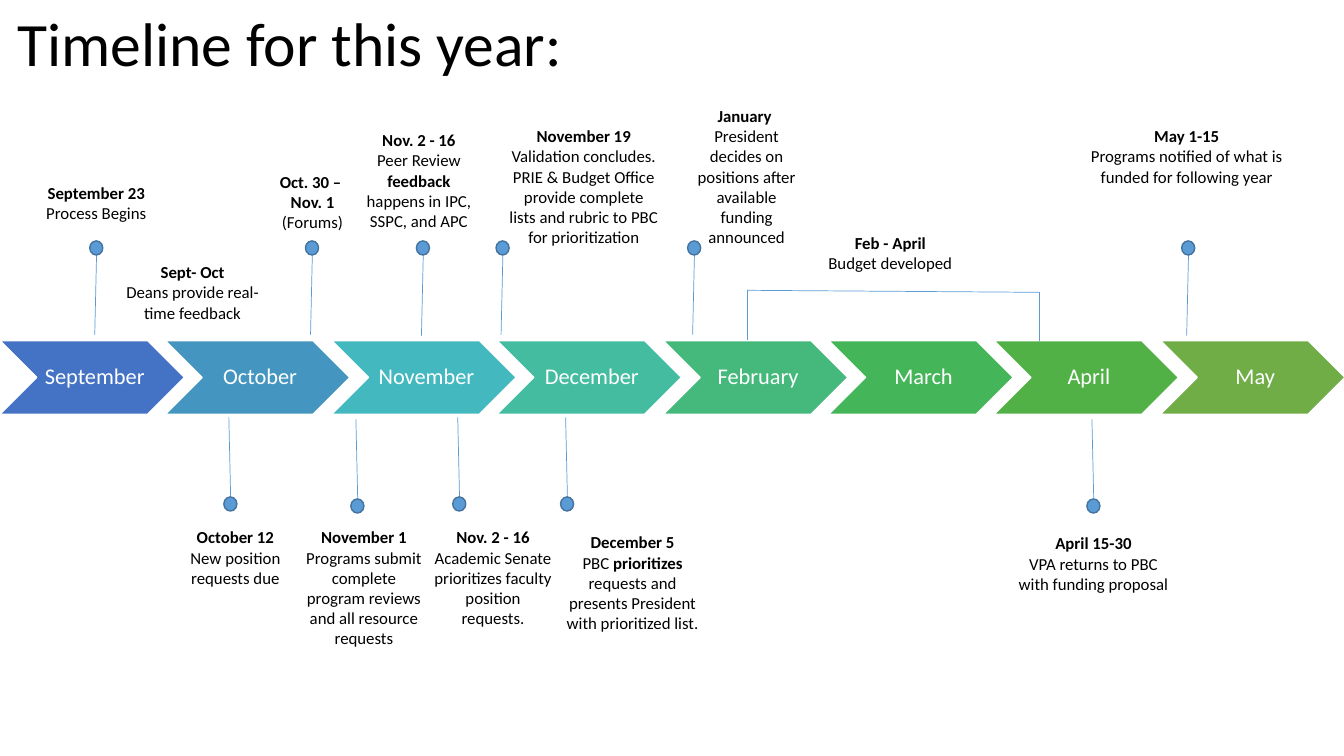
from dataclasses import dataclass

from lxml import etree
from pptx import Presentation, util as u
from pptx.dml.color import RGBColor
from pptx.enum import shapes, text
from pptx.oxml.ns import qn

PX = 9144  # EMU per px: 100 px to the inch


@dataclass(frozen=True)
class Theme:
    font: str = "Calibri"
    ink: str = "000000"
    white: str = "FFFFFF"
    stem: str = "5B9BD5"
    dot_edge: str = "43739E"
    title_size: int = 44
    month_size: int = 16
    note_size: int = 12


@dataclass(frozen=True)
class Month:
    name: str
    color: str


@dataclass(frozen=True)
class Pin:
    x: int
    above: bool
    shift: int = 0


@dataclass(frozen=True)
class Note:
    """Event text; words between asterisks are bold."""
    x: int
    y: int
    w: int
    h: int
    words: str


THEME = Theme()
MONTH_W, MONTH_H, MONTH_TOP, MONTH_STEP = 183, 73, 338, 164.4
DOT_W, DOT_H = 13, 14

MONTHS = [
    Month("September", "4472C4"), Month("October", "4496C1"),
    Month("November", "43B8BF"), Month("December", "43BCA0"),
    Month("February", "44B97B"), Month("March", "45B559"),
    Month("April", "52B146"), Month("May", "70AD47"),
]
PINS = [
    Pin(94, True), Pin(308, True), Pin(418, True, 1), Pin(497, True),
    Pin(687, True), Pin(1177, True, 1),
    Pin(227, False), Pin(353, False, 2), Pin(454, False), Pin(561, False),
    Pin(1083, False, 2),
]
NOTES = [
    Note(26, 176, 139, 50, "*September 23*\nProcess Begins"),
    Note(115, 255, 152, 71, "*Sept- Oct*\nDeans provide real-time feedback"),
    Note(262, 165, 96, 71, "*Oct. 30 – *\n*Nov. 1*\n(Forums)"),
    Note(346, 124, 139, 111, "*Nov. 2 - 16*\nPeer Review *feedback* happens in IPC, SSPC, and APC"),
    Note(495, 120, 168, 131, "*November 19*\nValidation concludes. PRIE & Budget Office provide "
         "complete lists and rubric to PBC for prioritization"),
    Note(675, 100, 131, 151, "*January *\nPresident decides on positions after available "
         "funding announced"),
    Note(774, 226, 218, 50, "*Feb - April*\nBudget developed"),
    Note(1068, 120, 218, 71, "*May 1-15*\nPrograms notified of what is funded for following year"),
    Note(176, 518, 115, 71, "*October 12*\nNew position requests due"),
    Note(291, 518, 140, 131, "*November 1*\nPrograms submit complete program reviews and all "
         "resource requests"),
    Note(420, 518, 138, 111, "*Nov. 2 - 16*\nAcademic Senate prioritizes faculty position requests."),
    Note(546, 523, 163, 111, "*December 5*\nPBC *prioritizes* requests and presents President "
         "with prioritized list."),
    Note(1000, 524, 169, 71, "*April 15-30*\nVPA returns to PBC with funding proposal"),
]
BUDGET_BRACKET = [(741, 337), (741, 288), (1031, 290), (1031, 338)]


def px(*lengths: float) -> list[u.Emu]:
    return [u.Emu(round(n) * PX) for n in lengths]


def rgb(color: str) -> RGBColor:
    return RGBColor.from_string(color)


def write(tf, words: str, *, size: int, color: str = THEME.ink,
          align=text.PP_ALIGN.CENTER, anchor=text.MSO_ANCHOR.TOP,
          spacing: float = 1.0) -> None:
    """Fill a text frame, one paragraph a line, with *bold* parts."""
    tf.word_wrap = True
    tf.vertical_anchor = anchor
    for i, line in enumerate(words.split("\n")):
        p = tf.add_paragraph() if i else tf.paragraphs[0]
        p.alignment, p.line_spacing = align, spacing
        for j, part in enumerate(line.split("*")):
            if part:
                r = p.add_run()
                r.text = part
                r.font.name, r.font.size = THEME.font, u.Pt(size)
                r.font.bold = j % 2 == 1
                r.font.color.rgb = rgb(color)


def add_solid(s, kind, box: tuple, fill: str, edge: str):
    sp = s.shapes.add_shape(kind, *px(*box))
    sp.shadow.inherit = False
    sp.fill.solid()
    sp.fill.fore_color.rgb = rgb(fill)
    sp.line.color.rgb = rgb(edge)
    sp.line.width = u.Pt(1)
    return sp


def add_line(s, start: tuple, end: tuple) -> None:
    line = s.shapes.add_connector(shapes.MSO_CONNECTOR.STRAIGHT, *px(*start, *end))
    line.line.color.rgb = rgb(THEME.stem)
    line.line.width = u.Pt(0.5)
    etree.SubElement(line._element.spPr, qn("a:effectLst"))


def add_title(s, words: str) -> None:
    sp = s.shapes.title
    sp.left, sp.top, sp.width, sp.height = px(7, 8, 915, 260)
    sp.text_frame.auto_size = text.MSO_AUTO_SIZE.NONE
    write(sp.text_frame, words, size=THEME.title_size,
          align=text.PP_ALIGN.LEFT, spacing=0.9)


def add_month(s, i: int, month: Month) -> None:
    box = (i * MONTH_STEP, MONTH_TOP, MONTH_W, MONTH_H)
    sp = add_solid(s, shapes.MSO_SHAPE.CHEVRON, box, month.color, THEME.white)
    tf = sp.text_frame
    tf.margin_left, tf.margin_top, tf.margin_right, tf.margin_bottom = px(7, 2, 2, 2)
    write(tf, month.name, size=THEME.month_size, color=THEME.white,
          anchor=text.MSO_ANCHOR.MIDDLE, spacing=0.9)


def add_pin(s, pin: Pin) -> None:
    foot, tip, dot_top = (332, 243, 239) if pin.above else (414, 503, 493)
    add_line(s, (pin.x, foot + pin.shift), (pin.x + 2, tip + pin.shift))
    dot_y = dot_top if pin.above else dot_top + pin.shift
    add_solid(s, shapes.MSO_SHAPE.OVAL, (pin.x - 5, dot_y, DOT_W, DOT_H),
              THEME.stem, THEME.dot_edge)


def add_note(s, note: Note) -> None:
    tf = s.shapes.add_textbox(*px(note.x, note.y, note.w, note.h)).text_frame
    tf.auto_size = text.MSO_AUTO_SIZE.SHAPE_TO_FIT_TEXT
    write(tf, note.words, size=THEME.note_size)


def main() -> None:
    prs = Presentation()
    prs.slide_width, prs.slide_height = px(1333, 750)
    s = prs.slides.add_slide(prs.slide_layouts.get_by_name("Title Only"))
    add_title(s, "Timeline for this year:")
    for i, month in enumerate(MONTHS):
        add_month(s, i, month)
    for pin in PINS:
        add_pin(s, pin)
    for start, end in zip(BUDGET_BRACKET, BUDGET_BRACKET[1:]):
        add_line(s, start, end)
    for note in NOTES:
        add_note(s, note)
    prs.save("out.pptx")


if __name__ == "__main__":
    main()
